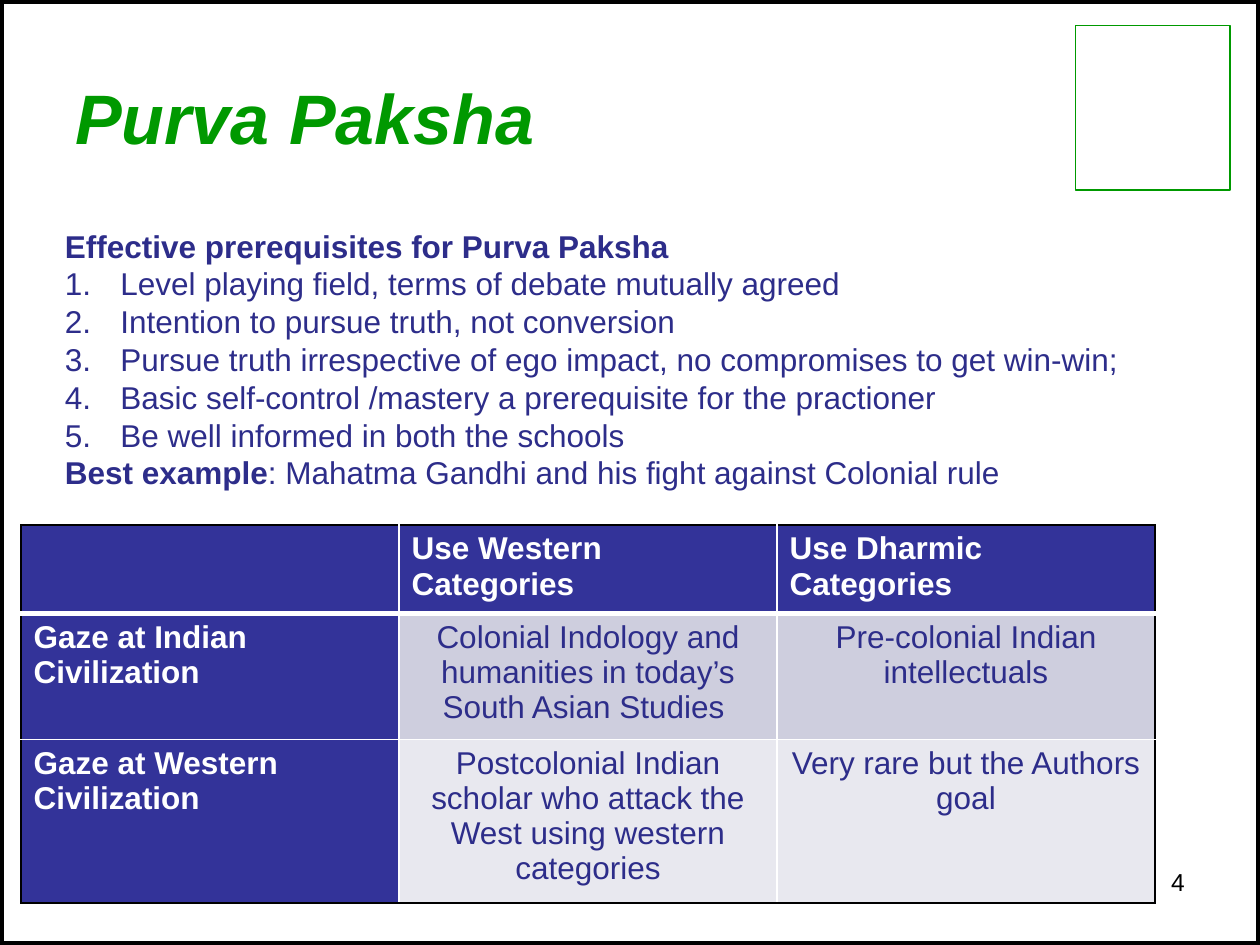
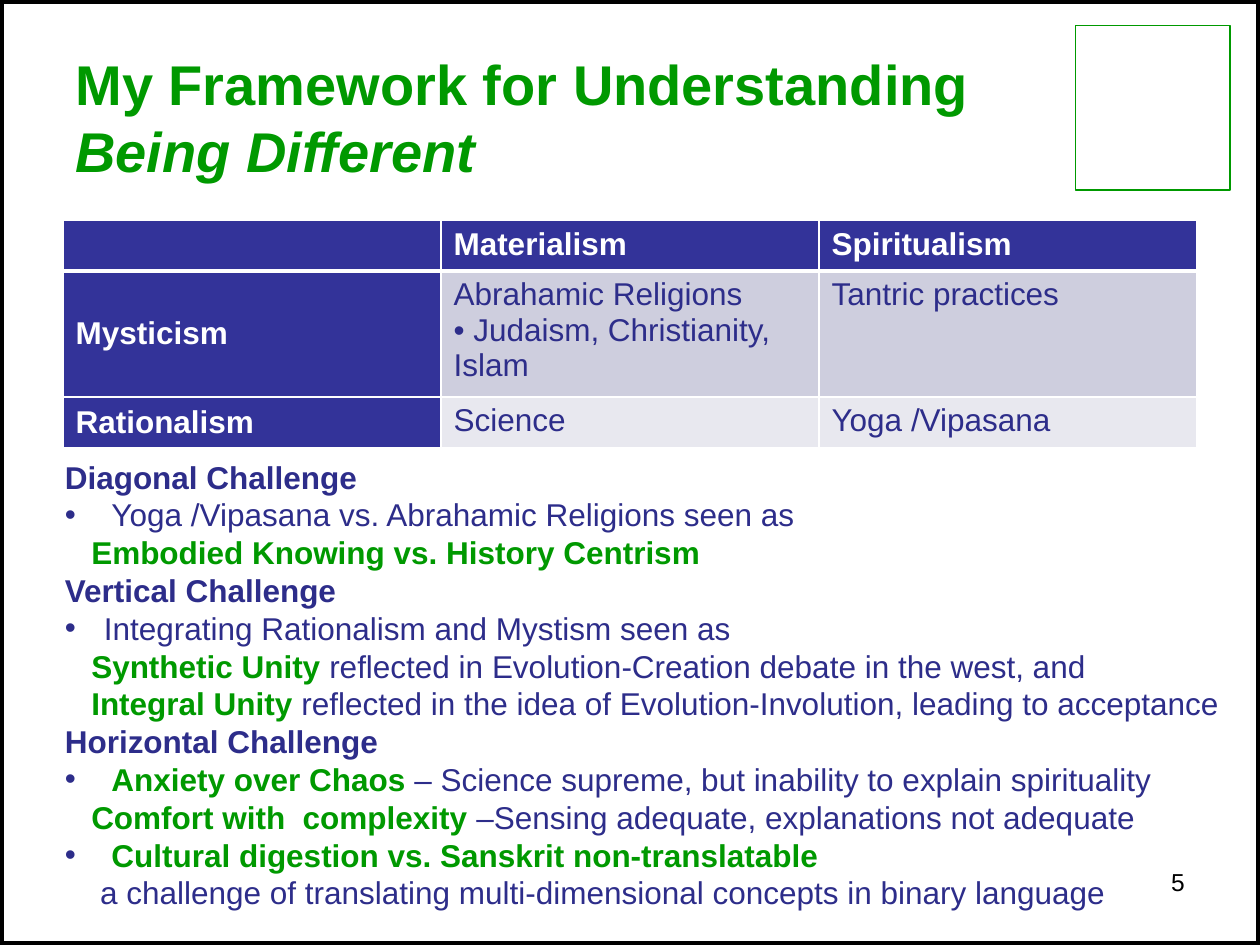
from lxml.etree import SubElement
from pptx import Presentation
from pptx.dml.color import RGBColor
from pptx.enum.shapes import MSO_SHAPE
from pptx.enum.text import MSO_ANCHOR, PP_ALIGN
from pptx.oxml import parse_xml
from pptx.oxml.ns import nsdecls, qn
from pptx.util import Inches, Pt

BLACK = RGBColor(0x00, 0x00, 0x00)
WHITE = RGBColor(0xFF, 0xFF, 0xFF)
GREEN = RGBColor(0x00, 0x99, 0x00)
NAVY = RGBColor(0x33, 0x33, 0x99)
INK = RGBColor(0x2D, 0x2D, 0x8A)
BANDS = [RGBColor(0xCE, 0xCE, 0xDE), RGBColor(0xE8, 0xE8, 0xEF)]

# Grid of 120 columns by 90 rows
WIDE, HIGH = Inches(10), Inches(7.5)
COLS, ROWS = 120, 90

# Font values of each kind of run
BASE = {"name": "Arial", "size": Pt(18), "bold": False}
FORMS = {
    "plain": BASE,
    "bold": BASE | {"bold": True},
    "title": BASE | {"bold": True, "size": Pt(40)},
    "head": BASE | {"bold": True, "size": Pt(32)},
    "page": BASE | {"size": Pt(14)},
}
FORMS["key"] = FORMS["bold"]
FORMS["label"] = FORMS["bold"]
FORMS["title"] = FORMS["title"] | {"italic": True}
FORMS["slant"] = FORMS["head"] | {"italic": True}
INKS = {"key": GREEN, "title": GREEN, "head": GREEN, "slant": GREEN,
        "label": WHITE, "page": BLACK}

TITLE = (6, 3.6, 90, 15)
BADGE = (102.4, 2.4, 14.75, 15.7)
PAGE = (86, 82, 28, 6.2)


def place(box):
    """Turn a box of columns and rows into lengths."""
    x, y, w, h = box
    return [round(v) for v in (x * WIDE / COLS, y * HIGH / ROWS,
                               w * WIDE / COLS, h * HIGH / ROWS)]


def add_runs(para, runs):
    for text, form in runs:
        run = para.add_run()
        run.text = text
        for name, value in FORMS[form].items():
            setattr(run.font, name, value)
        run.font.color.rgb = INKS.get(form, INK)


def add_mark(para, mark, left, hang):
    """Indent a paragraph and give it a bullet or a number."""
    props = para._p.get_or_add_pPr()
    props.set("marL", str(Inches(left)))
    props.set("indent", str(-Inches(hang)))
    if not mark:
        return
    tint = SubElement(props, qn("a:buClr"))
    SubElement(tint, qn("a:srgbClr")).set("val", str(INK))
    if mark == "1.":
        SubElement(props, qn("a:buAutoNum")).set("type", "arabicPeriod")
    else:
        SubElement(props, qn("a:buFont")).set("typeface", "Arial")
        SubElement(props, qn("a:buChar")).set("char", mark)


def add_text(slide, box, lines, anchor=MSO_ANCHOR.TOP, align=PP_ALIGN.LEFT):
    """Each line is (mark, indent, runs)."""
    frame = slide.shapes.add_textbox(*place(box)).text_frame
    frame.word_wrap, frame.vertical_anchor = True, anchor
    for i, (mark, left, runs) in enumerate(lines):
        para = frame.add_paragraph() if i else frame.paragraphs[0]
        para.alignment = align
        para.line_spacing = Pt(1.2 * FORMS[runs[0][1]]["size"].pt)
        add_mark(para, mark, left, left if mark else 0)
        add_runs(para, runs)


def add_frame(slide, box, color, width):
    rect = slide.shapes.add_shape(MSO_SHAPE.RECTANGLE, *place(box))
    rect.shadow.inherit = False
    rect.fill.background()
    rect.line.color.rgb = color
    rect.line.width = Pt(width)


def add_edges(cell, edges):
    """Edges are (colour, points) for left, right, top, bottom."""
    props = cell._tc.get_or_add_tcPr()
    for i, (side, (color, width)) in enumerate(zip("LRTB", edges)):
        props.insert(i, parse_xml(
            f'<a:ln{side} {nsdecls("a")} w="{Pt(width)}"><a:solidFill>'
            f'<a:srgbClr val="{color}"/></a:solidFill></a:ln{side}>'))


def add_grid(slide, box, highs, rows, rim, align, anchor):
    """Matrix with dark headings on top and at left; rim colours the outside."""
    shape = slide.shapes.add_table(len(rows), len(rows[0]), *place(box))
    table = shape.table
    table.horz_banding = False
    last, end = len(rows) - 1, len(rows[0]) - 1
    for r, row in enumerate(rows):
        table.rows[r].height = round(highs[r] * HIGH / ROWS)
        for c, text in enumerate(row):
            cell = table.cell(r, c)
            head = r == 0 or c == 0
            cell.fill.solid()
            cell.fill.fore_color.rgb = NAVY if head else BANDS[r - 1]
            cell.vertical_anchor = anchor if r and c == 0 else MSO_ANCHOR.TOP
            add_edges(cell, [
                (rim if c == 0 else WHITE, 1),
                (rim if c == end else WHITE, 1),
                (rim if r == 0 else WHITE, 3 if r == 1 else 1),
                (rim if r == last else WHITE, 3 if r == 0 else 1)])
            for i, line in enumerate(text.split("\n")):
                frame = cell.text_frame
                para = frame.add_paragraph() if i else frame.paragraphs[0]
                para.alignment = PP_ALIGN.LEFT if head else align
                if line.startswith("•"):
                    add_mark(para, "•", 0, 0)
                    line = line[1:]
                if line:
                    add_runs(para, [(line, "label" if head else "plain")])


def add_base(deck, title, page):
    """Slide with the shared frame, badge, title and page number."""
    slide = deck.slides.add_slide(deck.slide_layouts[6])
    add_frame(slide, (0, 0, COLS, ROWS), BLACK, 4.5)
    add_frame(slide, BADGE, GREEN, 0.75)
    add_text(slide, TITLE, [("", 0, title)], MSO_ANCHOR.MIDDLE)
    add_text(slide, PAGE, [("", 0, [(page, "page")])], align=PP_ALIGN.RIGHT)
    return slide


def add_paksha(deck):
    slide = add_base(deck, [("Purva Paksha", "title")], "4")
    # Gaze matrix
    add_grid(slide, (2, 50, 108, 33.8), [7.8, 11.3, 14.7], [
        ["", "Use Western Categories", "Use Dharmic Categories"],
        ["Gaze at Indian Civilization",
         "Colonial Indology and humanities in today’s South Asian Studies ",
         "Pre-colonial Indian intellectuals"],
        ["Gaze at Western Civilization",
         "Postcolonial Indian scholar who attack the West using western "
         "categories",
         "Very rare but the Authors goal"],
    ], BLACK, PP_ALIGN.CENTER, MSO_ANCHOR.TOP)
    # Prerequisites
    needs = [
        "Level playing field, terms of debate mutually agreed",
        "Intention to pursue truth, not conversion",
        "Pursue truth irrespective of ego impact, no compromises to get "
        "win-win;",
        "Basic self-control /mastery a prerequisite for the practioner",
        "Be well informed in both the schools",
    ]
    add_text(slide, (5, 21, 105, 26.6), [
        ("", 0, [("Effective prerequisites for Purva Paksha", "bold")]),
        *[("1.", 0.44, [(need, "plain")]) for need in needs],
        ("", 0, [("Best example", "bold"),
                 (": Mahatma Gandhi and his fight against Colonial rule",
                  "plain")]),
    ])


def add_model(deck):
    slide = add_base(deck, [("My Framework for Understanding ", "head"),
                            ("Being Different", "slant")], "5")
    # World view matrix
    add_grid(slide, (6, 21, 108, 20.9), [4.8, 11.3, 4.8], [
        ["", "Materialism", "Spiritualism"],
        ["Mysticism", "Abrahamic Religions\n• Judaism, Christianity, Islam",
         "Tantric practices"],
        ["Rationalism", "Science", "Yoga /Vipasana"],
    ], WHITE, PP_ALIGN.LEFT, MSO_ANCHOR.MIDDLE)
    # Challenges
    far, near, sub = 0.37, 0.31, 0.21
    add_text(slide, (5, 43, 115, 44.9), [
        ("", 0, [("Diagonal Challenge", "bold")]),
        ("•", far, [("Yoga /Vipasana vs. Abrahamic Religions seen as",
                     "plain")]),
        ("", sub, [("Embodied Knowing vs. History Centrism", "key")]),
        ("", 0, [("Vertical Challenge", "bold")]),
        ("•", near, [("Integrating Rationalism and Mystism seen as",
                      "plain")]),
        ("", sub, [("Synthetic Unity", "key"),
                   (" reflected in Evolution-Creation debate in the west, and",
                    "plain")]),
        ("", sub, [("Integral Unity ", "key"),
                   ("reflected in the idea of Evolution-Involution, leading "
                    "to acceptance", "plain")]),
        ("", 0, [("Horizontal Challenge", "bold")]),
        ("•", far, [("Anxiety over Chaos", "key"),
                    (" – Science supreme, but inability to explain "
                     "spirituality", "plain")]),
        ("", sub, [("Comfort with  complexity", "key"),
                   (" –Sensing adequate, explanations not adequate",
                    "plain")]),
        ("•", far, [("Cultural digestion vs. Sanskrit non-translatable",
                     "key")]),
        ("", 0.28, [("a challenge of translating multi-dimensional concepts "
                     "in binary language", "plain")]),
    ])


def main():
    deck = Presentation()
    deck.slide_width, deck.slide_height = WIDE, HIGH
    add_paksha(deck)
    add_model(deck)
    deck.save("out.pptx")


if __name__ == "__main__":
    main()
